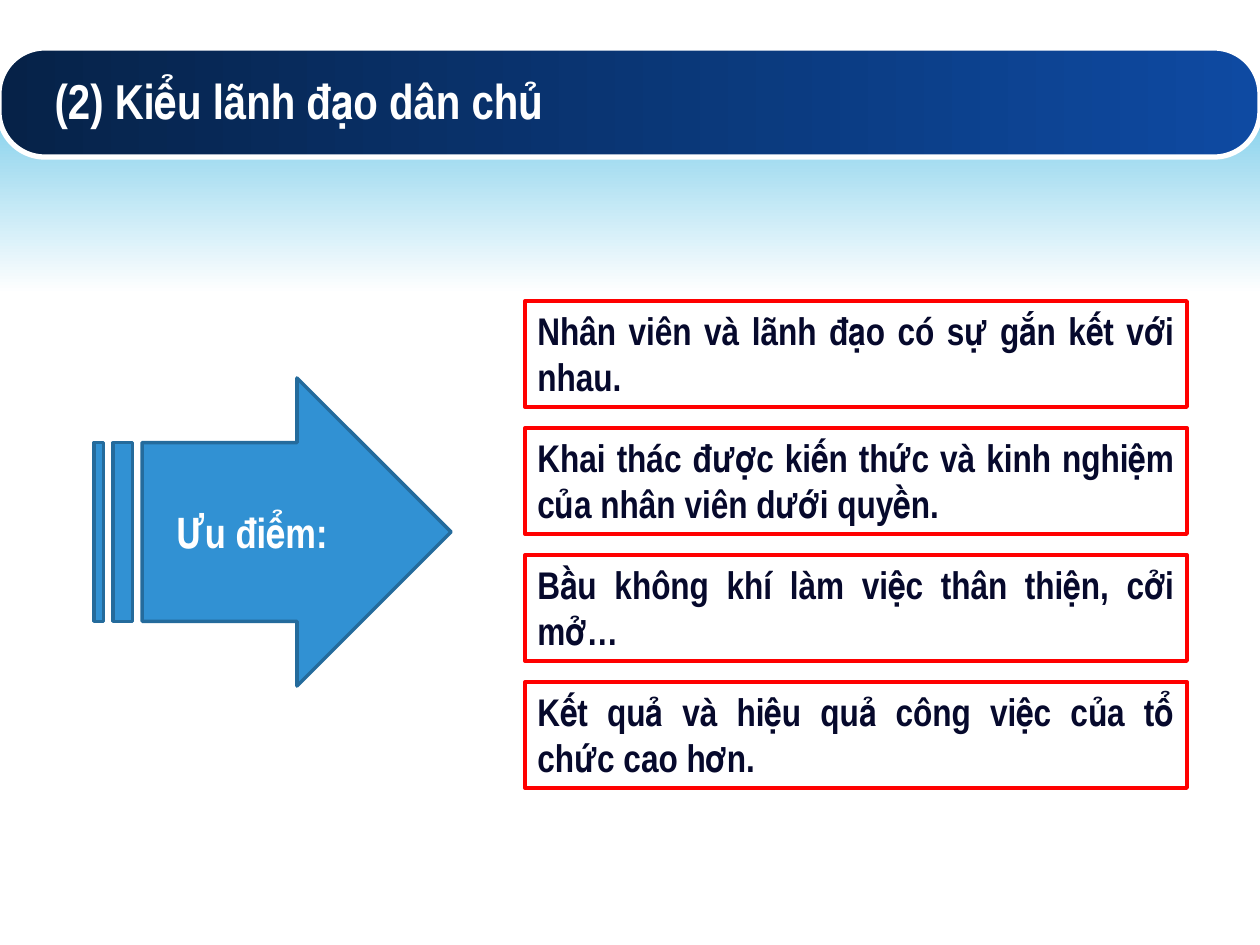
from pptx import Presentation
from pptx.dml.color import RGBColor
from pptx.enum.shapes import MSO_SHAPE
from pptx.enum.text import MSO_ANCHOR, MSO_AUTO_SIZE, PP_ALIGN
from pptx.util import Emu, Pt

RECTANGLE = MSO_SHAPE.RECTANGLE
ROUNDED = MSO_SHAPE.ROUNDED_RECTANGLE
STRIPED_ARROW = MSO_SHAPE.STRIPED_RIGHT_ARROW
TOP, MIDDLE = MSO_ANCHOR.TOP, MSO_ANCHOR.MIDDLE
LEFT, CENTER, JUSTIFY = PP_ALIGN.LEFT, PP_ALIGN.CENTER, PP_ALIGN.JUSTIFY

PX_PER_INCH = 126
FONT = "Arial Narrow"
WHITE, NAVY, RED = "FFFFFF", "06092C", "FF0000"

ADVANTAGES = [
    "Nhân viên và lãnh đạo có sự gắn kết với nhau.",
    "Khai thác được kiến thức và kinh nghiệm của nhân viên dưới quyền.",
    "Bầu không khí làm việc thân thiện, cởi mở…",
    "Kết quả và hiệu quả công việc của tổ chức cao hơn.",
]
BOX_LEFT, BOX_TOP, BOX_WIDTH, BOX_HEIGHT, BOX_STEP = 525, 301, 662, 106, 127


def px(length):
    return Emu(round(length * 914400 / PX_PER_INCH))


def color(hex_value):
    return RGBColor.from_string(hex_value)


def add_shape(page, kind, area, line=None, width=0, adjust=()):
    """Add an unfilled preset shape; area is left, top, width, height in px."""
    shape = page.shapes.add_shape(kind, *map(px, area))
    shape.shadow.inherit = False
    shape.fill.background()
    for index, value in enumerate(adjust):
        shape.adjustments[index] = value
    if line:
        shape.line.color.rgb = color(line)
        shape.line.width = Pt(width)
    else:
        shape.line.fill.background()
    return shape


def fill_gradient(shape, start, end, angle):
    """Fill from start to end; angle runs counter-clockwise."""
    shape.fill.gradient()
    shape.fill.gradient_angle = angle
    for stop, hex_value in zip(shape.fill.gradient_stops, (start, end)):
        stop.color.rgb = color(hex_value)


def write_text(shape, text, size, hex_value, align, anchor):
    frame = shape.text_frame
    frame.text = text
    frame.word_wrap = True
    frame.auto_size = MSO_AUTO_SIZE.NONE
    frame.vertical_anchor = anchor
    para = frame.paragraphs[0]
    para.alignment = align
    para.font.name = FONT
    para.font.size = Pt(size)
    para.font.bold = True
    para.font.color.rgb = color(hex_value)


def add_header(page):
    glow = add_shape(page, RECTANGLE, (0, 106, 1260, 188))
    fill_gradient(glow, "81CFEB", WHITE, 270)
    bar = add_shape(page, ROUNDED, (-1, 48, 1261, 109), WHITE, 3, [0.42])
    fill_gradient(bar, "062248", "0E4AA2", 0)


def add_title(page, text):
    title = page.shapes.title
    title.left, title.top, title.width, title.height = map(px, (42, 52, 1197, 96))
    write_text(title, text, 28, WHITE, LEFT, MIDDLE)
    # The placeholder comes first in the tree; bring it in front of the header.
    page.shapes._spTree.append(title._element)


def add_arrow(page, text):
    arrow = add_shape(page, STRIPED_ARROW, (94, 378, 357, 308), "246B9C", 2, [0.58, 0.5])
    arrow.fill.solid()
    arrow.fill.fore_color.rgb = color("3191D3")
    write_text(arrow, text, 24, WHITE, CENTER, MIDDLE)


def add_advantages(page):
    for row, text in enumerate(ADVANTAGES):
        area = (BOX_LEFT, BOX_TOP + row * BOX_STEP, BOX_WIDTH, BOX_HEIGHT)
        box = add_shape(page, RECTANGLE, area, RED, 2.25)
        write_text(box, text, 22, NAVY, JUSTIFY, TOP)


def main():
    deck = Presentation()
    deck.slide_width, deck.slide_height = px(1260), px(945)
    page = deck.slides.add_slide(deck.slide_layouts[5])
    add_header(page)
    add_title(page, "(2) Kiểu lãnh đạo dân chủ")
    add_arrow(page, "Ưu điểm:")
    add_advantages(page)
    deck.save("out.pptx")


if __name__ == "__main__":
    main()
